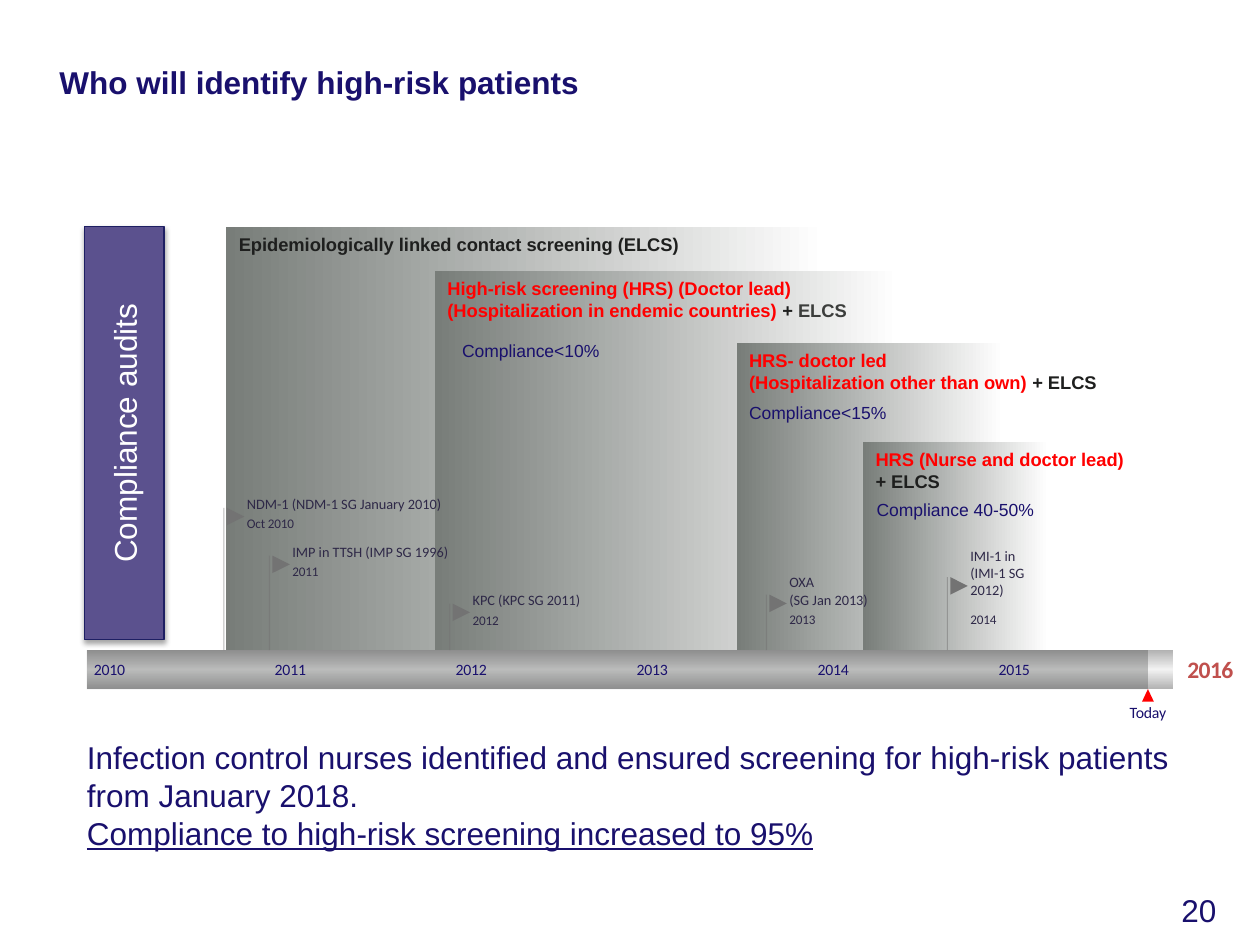
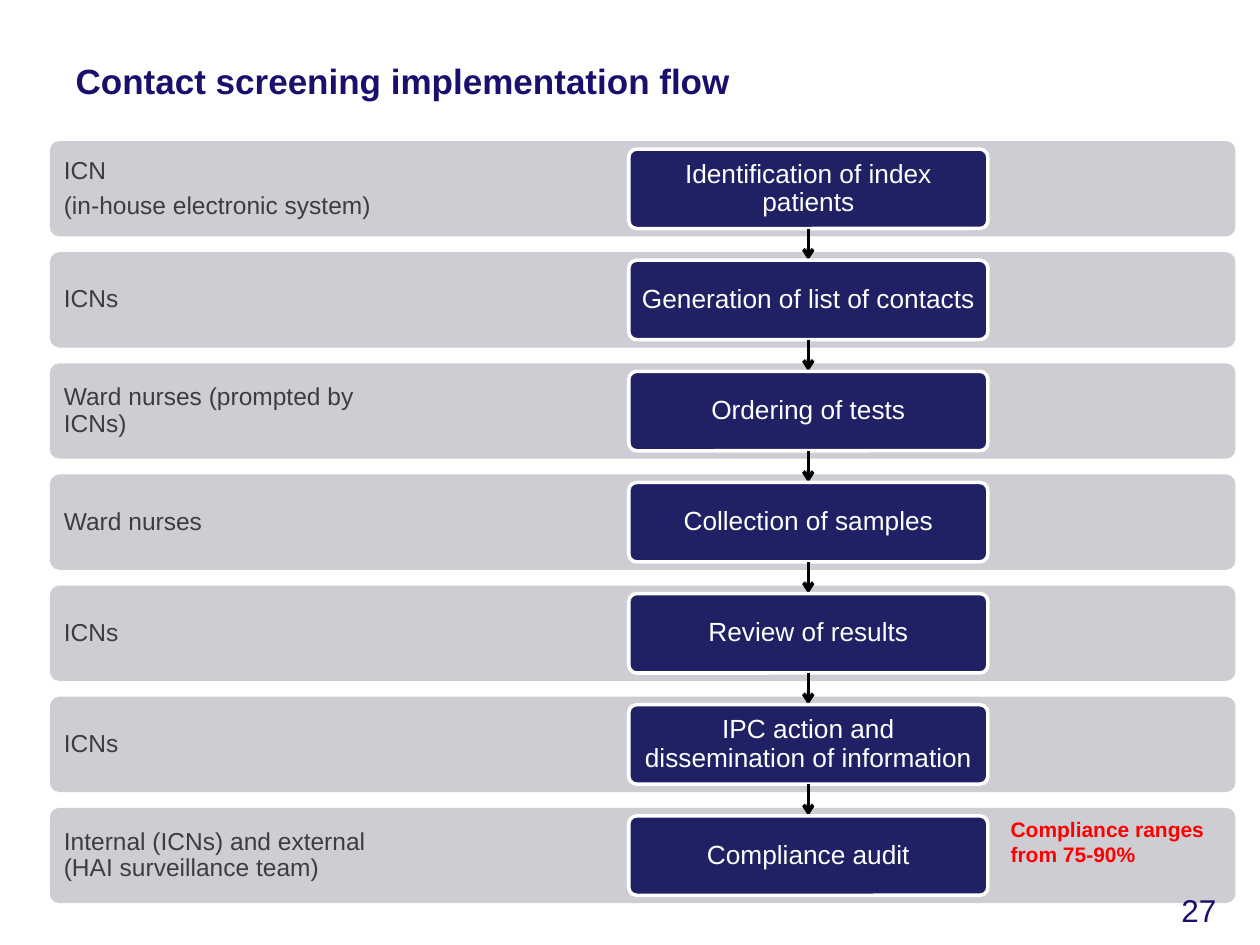
from dataclasses import dataclass, replace

from lxml.etree import SubElement
from pptx import Presentation
from pptx.dml.color import RGBColor
from pptx.enum.shapes import MSO_CONNECTOR, MSO_SHAPE as Preset
from pptx.enum.text import MSO_ANCHOR as Anchor, MSO_AUTO_SIZE, PP_ALIGN as Align
from pptx.oxml.ns import qn
from pptx.shapes.autoshape import Shape
from pptx.shapes.connector import Connector
from pptx.slide import Slide
from pptx.text.text import TextFrame
from pptx.util import Pt

# Shared look
COLORS = {
    "navy": "19106D", "ink": "1E1F1E", "soft ink": "3C3E3C", "red": "FF0000",
    "white": "FFFFFF", "band": "787D79", "flag": "737373", "caption": "2E2847",
    "bar edge": "B2B2B2", "bar middle": "F2F2F2", "elapsed": "3C3E3D",
    "next year": "C0504D", "audit": "5B518E", "audit line": "1E1F63",
    "row": "CDCDD3", "step": "202164", "black": "000000",
}
NO_INSETS = (0, 0, 0, 0)
BOX_INSETS = (7.2, 3.6, 7.2, 3.6)


@dataclass(frozen=True)
class Box:
    left: float
    top: float
    width: float
    height: float


@dataclass(frozen=True)
class Style:
    size: float
    color: str = "navy"
    font: str = "Arial"
    bold: bool = False
    underline: bool = False
    tracking: float = 0


@dataclass(frozen=True)
class Run:
    text: str
    style: Style


@dataclass(frozen=True)
class Band:
    left: float
    top: float
    paragraphs: list[list[Run]]


@dataclass(frozen=True)
class Milestone:
    pole: float
    flag_top: float
    caption_top: float
    caption_height: float
    date_top: float
    caption: list[str]
    date: str
    caption_width: float = 133


@dataclass(frozen=True)
class FlowStep:
    owners: list[str]
    action: str


BODY = Style(18)
BAND_INK = Style(10.5, "ink", bold=True)
BAND_RED = replace(BAND_INK, color="red")
COMPLIANCE = Style(10)
YEAR = Style(9, font="Calibri", tracking=-0.1)
CAPTION = Style(8.2, "caption", "Calibri")
DATE = Style(7.5, "caption", "Calibri", tracking=-0.1)


def rgb(name: str) -> RGBColor:
    return RGBColor.from_string(COLORS[name])


def lines(style: Style, *texts: str) -> list[list[Run]]:
    return [[Run(text, style)] for text in texts]


# Text
def write(frame: TextFrame, paragraphs: list[list[Run]], align: Align = Align.LEFT,
          anchor: Anchor = Anchor.TOP, insets: tuple = BOX_INSETS, wrap: bool = True,
          line_spacing: float = 1, gap: float = 0) -> None:
    frame.word_wrap = wrap
    frame.auto_size = MSO_AUTO_SIZE.NONE
    frame.vertical_anchor = anchor
    (frame.margin_left, frame.margin_top,
     frame.margin_right, frame.margin_bottom) = map(Pt, insets)
    for index, runs in enumerate(paragraphs):
        paragraph = frame.add_paragraph() if index else frame.paragraphs[0]
        paragraph.alignment = align
        paragraph.line_spacing = line_spacing
        paragraph.space_before = Pt(gap if index else 0)
        for item in runs:
            run = paragraph.add_run()
            run.text = item.text
            font, style = run.font, item.style
            font.name, font.size = style.font, Pt(style.size)
            font.bold, font.underline = style.bold, style.underline
            font.color.rgb = rgb(style.color)
            if style.tracking:
                run._r.get_or_add_rPr().set("spc", str(round(style.tracking * 100)))


def points(box: Box) -> tuple:
    return Pt(box.left), Pt(box.top), Pt(box.width), Pt(box.height)


def add_text(slide: Slide, box: Box, paragraphs: list[list[Run]], **layout) -> None:
    write(slide.shapes.add_textbox(*points(box)).text_frame, paragraphs, **layout)


def add_label(slide: Slide, box: Box, paragraphs: list[list[Run]],
              align: Align = Align.LEFT) -> None:
    add_text(slide, box, paragraphs, align=align, anchor=Anchor.MIDDLE, insets=NO_INSETS)


# Shapes and lines
def add_block(slide: Slide, preset: Preset, box: Box, fill: str | None = None,
              line: str | None = None, line_width: float = 0) -> Shape:
    block = slide.shapes.add_shape(preset, *points(box))
    block.shadow.inherit = False
    if fill:
        block.fill.solid()
        block.fill.fore_color.rgb = rgb(fill)
    if line:
        block.line.color.rgb = rgb(line)
        block.line.width = Pt(line_width)
    else:
        block.line.fill.background()
    return block


def add_rounded(slide: Slide, box: Box, fill: str, **outline) -> Shape:
    block = add_block(slide, Preset.ROUNDED_RECTANGLE, box, fill, **outline)
    block.adjustments[0] = 0.1
    return block


def set_gradient(block: Shape, stops: list[tuple[int, str]], angle: int) -> None:
    block.fill.gradient()
    gradient = block._element.spPr.find(qn("a:gradFill"))
    gradient.clear()
    stop_list = SubElement(gradient, qn("a:gsLst"))
    for position, color in stops:
        stop = SubElement(stop_list, qn("a:gs"), pos=str(position * 1000))
        SubElement(stop, qn("a:srgbClr"), val=COLORS[color])
    SubElement(gradient, qn("a:lin"), ang=str(angle * 60000), scaled="0")


def set_alpha(item: Shape | Connector, percent: int) -> None:
    for color in item._element.spPr.iter(qn("a:srgbClr")):
        SubElement(color, qn("a:alpha"), val=str(percent * 1000))


def add_drop_shadow(block: Shape) -> None:
    effects = block._element.spPr.find(qn("a:effectLst"))
    shadow = SubElement(effects, qn("a:outerShdw"), blurRad=str(Pt(3.1)),
                        dist=str(Pt(1.8)), dir="5400000", rotWithShape="0")
    color = SubElement(shadow, qn("a:srgbClr"), val=COLORS["black"])
    SubElement(color, qn("a:alpha"), val="35000")


def add_vertical(slide: Slide, x: float, top: float, bottom: float, color: str,
                 width: float, arrow: bool = False) -> Connector:
    stroke = slide.shapes.add_connector(
        MSO_CONNECTOR.STRAIGHT, Pt(x), Pt(top), Pt(x), Pt(bottom))
    stroke.line.color.rgb = rgb(color)
    stroke.line.width = Pt(width)
    if arrow:
        SubElement(stroke.line._get_or_add_ln(), qn("a:tailEnd"), type="arrow")
    SubElement(stroke._element.spPr, qn("a:effectLst"))
    return stroke


# Title and page number
def start_slide(deck: Presentation, title: str, box: Box, size: float) -> Slide:
    slide = deck.slides.add_slide(deck.slide_layouts[5])
    heading = slide.shapes.title
    heading.left, heading.top, heading.width, heading.height = points(box)
    write(heading.text_frame, lines(Style(size, bold=True), title), anchor=Anchor.MIDDLE)
    return slide


def add_page_number(slide: Slide, number: int) -> None:
    add_text(slide, Box(667.6, 505.4, 34.6, 28.8), lines(BODY, str(number)),
             align=Align.RIGHT, wrap=False)


# Slide 1: screening timeline
BAR = Box(49.7, 371.5, 620.6, 22.3)
TODAY = 656
YEAR_STEP = 103.4

BANDS = [
    Band(129.4, 129.6, lines(BAND_INK, "Epidemiologically linked contact screening (ELCS)")),
    Band(248.6, 154.8, [
        [Run("High-risk screening (HRS) (Doctor lead)", BAND_RED)],
        [Run("(Hospitalization in endemic countries) ", BAND_RED), Run("+ ", BAND_INK),
         Run("ELCS", replace(BAND_INK, color="soft ink"))]]),
    Band(421, 196.2, [
        [Run("HRS- doctor led", BAND_RED)],
        [Run("(Hospitalization other than own) ", BAND_RED), Run("+ ELCS", BAND_INK)]]),
    Band(493.2, 252.7, [
        [Run("HRS (Nurse and doctor lead) ", BAND_RED), Run("+ ELCS", BAND_INK)]]),
]
MILESTONES = [
    Milestone(128, 290.2, 283, 10, 294.5, ["NDM-1 (NDM-1 SG January 2010)"], "Oct 2010"),
    Milestone(154, 317.5, 310.3, 10, 321.8, ["IMP in TTSH (IMP SG 1996)"], "2011"),
    Milestone(257, 344.9, 337.7, 10, 349.9, ["KPC (KPC SG 2011)"], "2012"),
    Milestone(438, 339.8, 327.6, 20, 349.2, ["OXA", "(SG Jan 2013)"], "2013"),
    Milestone(541.4, 329.8, 307.4, 40, 349.2, ["IMI-1 in (IMI-1 SG 2012)"], "2014", 34.6),
]
COMPLIANCE_NOTES = [
    (257, 190.8, "Compliance<10%"),
    (421, 226.1, "Compliance<15%"),
    (493.9, 281.5, "Compliance 40-50%"),
]


def add_band(slide: Slide, band: Band) -> None:
    block = add_block(slide, Preset.RECTANGLE,
                      Box(band.left, band.top, TODAY - band.left, BAR.top - band.top))
    set_gradient(block, [(0, "white"), (35, "white"), (100, "band")], 180)
    write(block.text_frame, band.paragraphs)


def add_milestone(slide: Slide, event: Milestone) -> None:
    set_alpha(add_vertical(slide, event.pole, event.flag_top, BAR.top, "flag", 0.6), 50)
    flag = add_block(slide, Preset.FLOWCHART_MERGE,
                     Box(event.pole + 1.6, event.flag_top, 10, 10), "flag")
    flag.rotation = 270
    text_left = event.pole + 13.1
    add_label(slide, Box(text_left, event.caption_top, event.caption_width,
                         event.caption_height), lines(CAPTION, *event.caption))
    add_label(slide, Box(text_left, event.date_top, 40, 9.4), lines(DATE, event.date))


def build_timeline(deck: Presentation) -> None:
    slide = start_slide(deck, "Who will identify high-risk patients",
                        Box(26.8, 25.2, 530.6, 43.2), 18)
    for band in BANDS:
        add_band(slide, band)

    # Year bar
    bar = add_block(slide, Preset.RECTANGLE, BAR)
    set_gradient(bar, [(0, "bar edge"), (50, "bar middle"), (100, "bar edge")], 90)
    elapsed = add_block(slide, Preset.RECTANGLE, replace(BAR, width=TODAY - BAR.left), "elapsed")
    set_alpha(elapsed, 30)
    for index in range(6):
        add_label(slide, Box(53.6 + index * YEAR_STEP, 377, 30, 10.8),
                  lines(YEAR, str(2010 + index)))
    add_label(slide, Box(671.6, 374, 40, 16.6),
              lines(Style(13.5, "next year", "Calibri", True, tracking=-0.3), "2016"),
              Align.CENTER)
    add_block(slide, Preset.ISOSCELES_TRIANGLE, Box(TODAY - 3.4, 393.8, 6.8, 7.2), "red")
    add_label(slide, Box(TODAY - 25, 396, 50, 21.6), lines(YEAR, "Today"), Align.CENTER)

    for event in MILESTONES:
        add_milestone(slide, event)
    for left, top, note in COMPLIANCE_NOTES:
        add_text(slide, Box(left, top, 127, 19.4), lines(COMPLIANCE, note))

    # Audit pillar and conclusion
    audits = add_block(slide, Preset.RECTANGLE, Box(48.2, 129.6, 45.6, 236),
                       "audit", "audit line", 0.75)
    add_drop_shadow(audits)
    write(audits.text_frame, lines(replace(BODY, color="white"), "Compliance audits"),
          align=Align.CENTER, anchor=Anchor.MIDDLE)
    audits.text_frame._txBody.bodyPr.set("vert", "vert270")
    add_text(slide, Box(42.6, 418.3, 638, 72.7), [
        [Run("Infection control nurses identified and ensured screening for "
             "high-risk patients from January 2018.", BODY)],
        [Run("Compliance to high-risk screening increased to 95%",
             replace(BODY, underline=True))]])
    add_page_number(slide, 20)


# Slide 2: contact screening flow
ROW = Box(28.5, 80.6, 677.5, 54.5)
STEP = Box(359.3, 85.2, 205.2, 45.4)
PITCH = 63.5
FLOW = [
    FlowStep(["ICN", "(in-house electronic system)"], "Identification of index patients"),
    FlowStep(["ICNs"], "Generation of list of contacts"),
    FlowStep(["Ward nurses (prompted by ICNs)"], "Ordering of tests"),
    FlowStep(["Ward nurses"], "Collection of samples"),
    FlowStep(["ICNs"], "Review of results"),
    FlowStep(["ICNs"], "IPC action and dissemination of information"),
    FlowStep(["Internal (ICNs) and external (HAI surveillance team)"], "Compliance audit"),
]


def build_flow(deck: Presentation) -> None:
    slide = start_slide(deck, "Contact screening implementation flow",
                        Box(36, 22, 525.6, 48.2), 20)
    for index, flow_step in enumerate(FLOW):
        row = add_rounded(slide, replace(ROW, top=ROW.top + index * PITCH), "row")
        write(row.text_frame, lines(Style(14, "soft ink"), *flow_step.owners),
              anchor=Anchor.MIDDLE, insets=(6.4, 6.4, 482, 6.4), line_spacing=0.9, gap=5)
    for index, flow_step in enumerate(FLOW):
        top = STEP.top + index * PITCH
        if index:
            add_vertical(slide, STEP.left + STEP.width / 2, top - PITCH + STEP.height, top,
                         "black", 2, arrow=True)
        step = add_rounded(slide, replace(STEP, top=top), "step", line="white", line_width=2)
        write(step.text_frame, lines(Style(15, "white"), flow_step.action), align=Align.CENTER,
              anchor=Anchor.MIDDLE, insets=(4.5, 4.5, 4.5, 4.5), line_spacing=0.9)
    add_text(slide, Box(570.4, 463, 137.5, 36),
             lines(Style(12, "red", bold=True), "Compliance ranges from 75-90%"))
    add_page_number(slide, 27)


def main() -> None:
    deck = Presentation()
    deck.slide_width, deck.slide_height = Pt(720), Pt(540)
    build_timeline(deck)
    build_flow(deck)
    deck.save("out.pptx")


if __name__ == "__main__":
    main()
